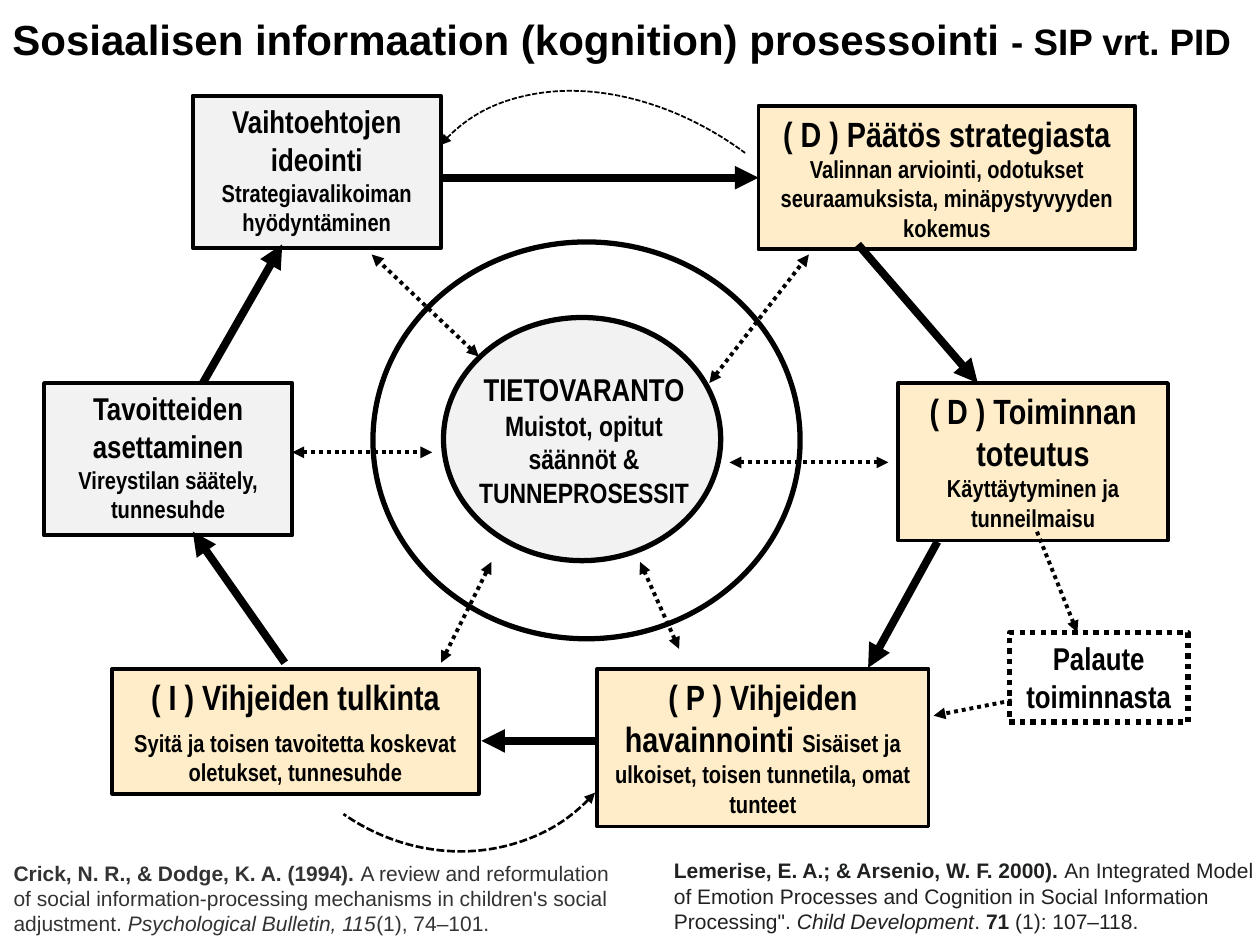
from pptx import Presentation
from pptx.dml.color import RGBColor
from pptx.enum.dml import MSO_LINE
from pptx.enum.shapes import MSO_CONNECTOR, MSO_SHAPE
from pptx.enum.text import MSO_ANCHOR, PP_ALIGN
from pptx.oxml.ns import qn
from pptx.util import Pt
from lxml.etree import SubElement

PX = 9144
BLACK = RGBColor(0x00, 0x00, 0x00)
CREAM = RGBColor(0xFF, 0xED, 0xC9)
GREY = RGBColor(0xF2, 0xF2, 0xF2)
DARK_GREY = RGBColor(0x33, 0x33, 0x33)
INK = RGBColor(0x20, 0x21, 0x22)
DOTS = MSO_LINE.ROUND_DOT
DASHES = MSO_LINE.SQUARE_DOT


def write_text(shape, paragraphs, font="Arial Narrow", color=BLACK, align=PP_ALIGN.CENTER, space=0):
    frame = shape.text_frame
    frame.word_wrap = True
    frame.vertical_anchor = MSO_ANCHOR.TOP
    for index, runs in enumerate(paragraphs):
        paragraph = frame.add_paragraph() if index else frame.paragraphs[0]
        paragraph.alignment = align
        if index:
            paragraph.space_before = Pt(space)
        for text, size, style in runs:
            run = paragraph.add_run()
            run.text = text
            run.font.name = font
            run.font.size = Pt(size)
            run.font.bold = "b" in style
            run.font.italic = "i" in style
            run.font.color.rgb = color


def style_line(shape, width, dash=None, ends=()):
    shape.line.color.rgb = BLACK
    shape.line.width = Pt(width)
    if dash:
        shape.line.dash_style = dash
    outline = shape.element.spPr.find(qn("a:ln"))
    for end in ends:
        SubElement(outline, qn(f"a:{end}"), type="triangle")


presentation = Presentation()
presentation.slide_width = 1000 * PX
presentation.slide_height = 750 * PX
slide = presentation.slides.add_slide(presentation.slide_layouts[6])
shapes = slide.shapes

ellipses = [((352, 252, 220, 193), GREY), ((296, 192, 339, 315), None)]
for place, fill in ellipses:
    ellipse = shapes.add_shape(MSO_SHAPE.OVAL, *(value * PX for value in place))
    ellipse.shadow.inherit = False
    if fill:
        ellipse.fill.solid()
        ellipse.fill.fore_color.rgb = fill
    else:
        ellipse.fill.background()
    style_line(ellipse, 3)

boxes = {
    "perception": ((474, 531, 263, 125), CREAM, [[
        ("( P ) Vihjeiden havainnointi ", 20, "b"),
        ("Sisäiset ja ulkoiset, toisen tunnetila, omat tunteet", 14, "b")]]),
    "interpretation": ((89, 531, 291, 99), CREAM, [
        [("( I ) Vihjeiden tulkinta", 20, "b")],
        [("Syitä ja toisen tavoitetta koskevat oletukset, tunnesuhde", 14, "b")]]),
    "goals": ((35, 304, 197, 121), GREY, [[
        ("Tavoitteiden asettaminen ", 18, "b"),
        ("Vireystilan säätely, tunnesuhde", 14, "b")]]),
    "options": ((153, 76, 197, 121), GREY, [[
        ("Vaihtoehtojen ideointi ", 18, "b"),
        ("Strategiavalikoiman hyödyntäminen", 14, "b")]]),
    "decision": ((602, 84, 299, 114), CREAM, [[
        ("( D ) Päätös strategiasta ", 20, "b"),
        ("Valinnan arviointi, odotukset seuraamuksista, minäpystyvyyden kokemus", 14, "b")]]),
    "action": ((713, 304, 214, 125), CREAM, [[
        ("( D ) Toiminnan toteutus ", 20, "b"),
        ("Käyttäytyminen ja tunneilmaisu", 14, "b")]]),
    "feedback": ((801, 502, 142, 71), None, [[("Palaute toiminnasta", 18, "b")]]),
}
steps = {}
for name, (place, fill, paragraphs) in boxes.items():
    box = shapes.add_shape(MSO_SHAPE.RECTANGLE, *(value * PX for value in place))
    box.shadow.inherit = False
    if fill:
        box.fill.solid()
        box.fill.fore_color.rgb = fill
        style_line(box, 2.25)
    else:
        box.fill.background()
        style_line(box, 3, DOTS)
    write_text(box, paragraphs, space=6)
    steps[name] = box

cycle_arrows = [
    (226, 526, 153, 422),
    (161, 304, 224, 194),
    (350, 141, 602, 141),
    (681, 194, 776, 304),
    (744, 430, 689, 530),
    (474, 588, 382, 588),
]
feedback_arrows = [(823, 422, 855, 502), (803, 556, 741, 568)]
memory_arrows = [
    (563, 304, 642, 202),
    (350, 526, 390, 446),
    (380, 283, 295, 202),
    (232, 359, 343, 359),
    (579, 367, 705, 367),
    (539, 515, 508, 446),
]
arrow_groups = [
    (cycle_arrows, 4.5, None, ["tailEnd"]),
    (feedback_arrows, 2.25, DOTS, ["tailEnd"]),
    (memory_arrows, 2.25, DOTS, ["headEnd", "tailEnd"]),
]
for arrows, width, dash, ends in arrow_groups:
    for points in arrows:
        arrow = shapes.add_connector(MSO_CONNECTOR.STRAIGHT, *(value * PX for value in points))
        style_line(arrow, width, dash, ends)
        SubElement(arrow.element.spPr, qn("a:effectLst"))
        if points == (350, 141, 602, 141):
            arrow.end_connect(steps["decision"], 1)

return_arcs = [((353, 43, 309, 418), 310.9, 1), ((207, 365, 294, 317), 131.8, 1.5)]
for place, rotation, width in return_arcs:
    arc = shapes.add_shape(MSO_SHAPE.ARC, *(value * PX for value in place))
    arc.shadow.inherit = False
    arc.fill.background()
    arc.rotation = rotation
    arc.adjustments[0] = 162
    arc.adjustments[1] = 211.07
    style_line(arc, width, DASHES, ["headEnd"])

texts = [
    ((354, 289, 219, 121), [[
        ("TIETOVARANTO ", 18, "b"),
        ("Muistot, opitut säännöt & TUNNEPROSESSIT", 16, "b")]], {}),
    ((-44, 6, 1075, 50), [[
        ("Sosiaalisen informaation (kognition) prosessointi ", 24, "b"),
        ("- SIP vrt. PID", 21, "b")]], {"font": "Arial"}),
    ((525, 676, 481, 71), [[
        ("Lemerise, E. A.; & Arsenio, W. F. 2000). ", 12, "b"),
        ("An Integrated Model of Emotion Processes and Cognition in Social Information Processing\". ", 12, ""),
        ("Child Development", 12, "i"),
        (". ", 12, ""),
        ("71", 12, "b"),
        (" (1): 107–118.", 12, "")]],
     {"font": "Arial", "color": INK, "align": PP_ALIGN.LEFT}),
    ((1, 678, 500, 71), [[
        ("Crick, N. R., & Dodge, K. A. (1994). ", 12, "b"),
        ("A review and reformulation of social information-processing mechanisms "
         "in children's social adjustment. ", 12, ""),
        ("Psychological Bulletin, 115", 12, "i"),
        ("(1), 74–101.", 12, "")]],
     {"font": "Arial", "color": DARK_GREY, "align": PP_ALIGN.LEFT}),
]
for place, paragraphs, text_format in texts:
    text_box = shapes.add_textbox(*(value * PX for value in place))
    write_text(text_box, paragraphs, **text_format)

presentation.save("out.pptx")
